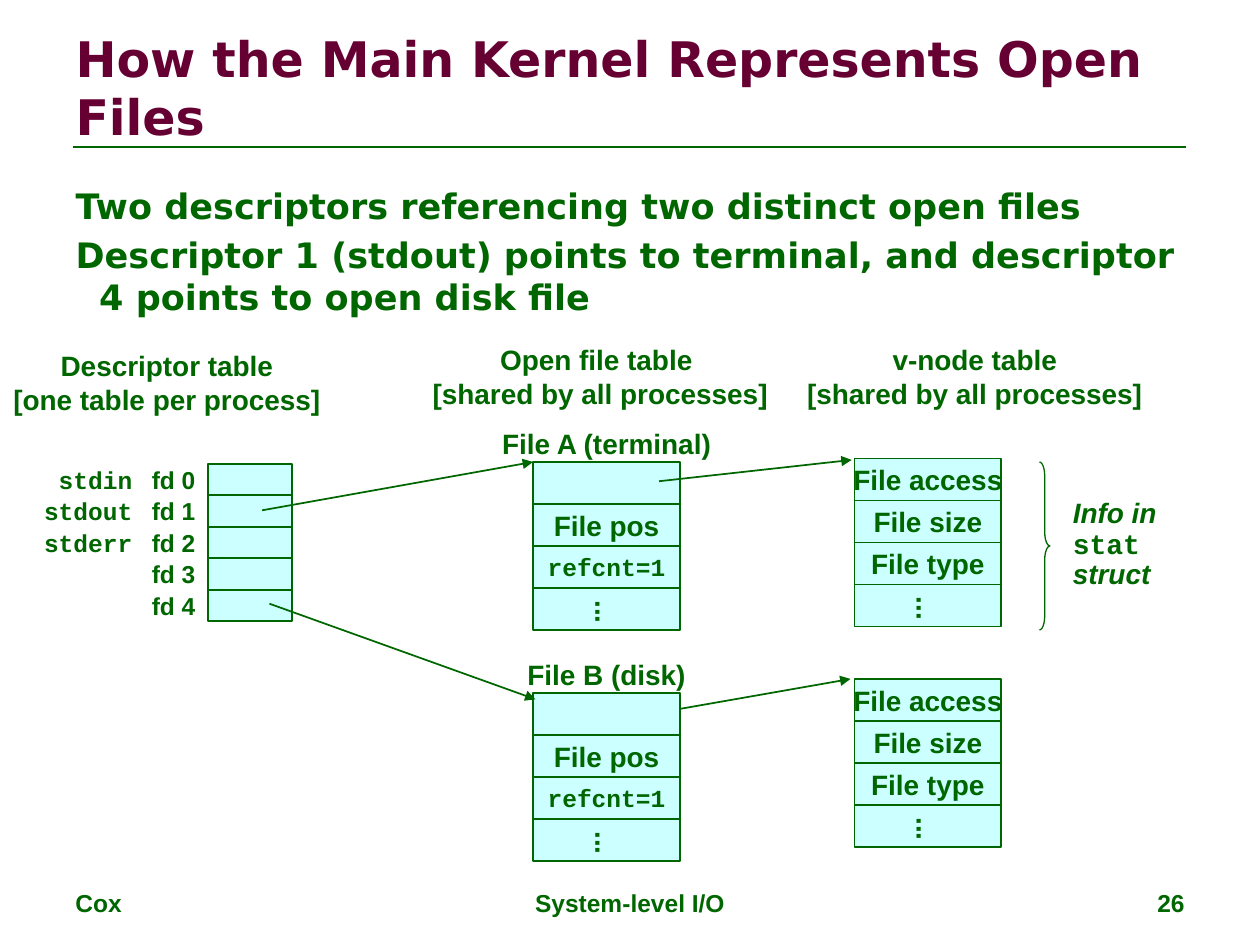
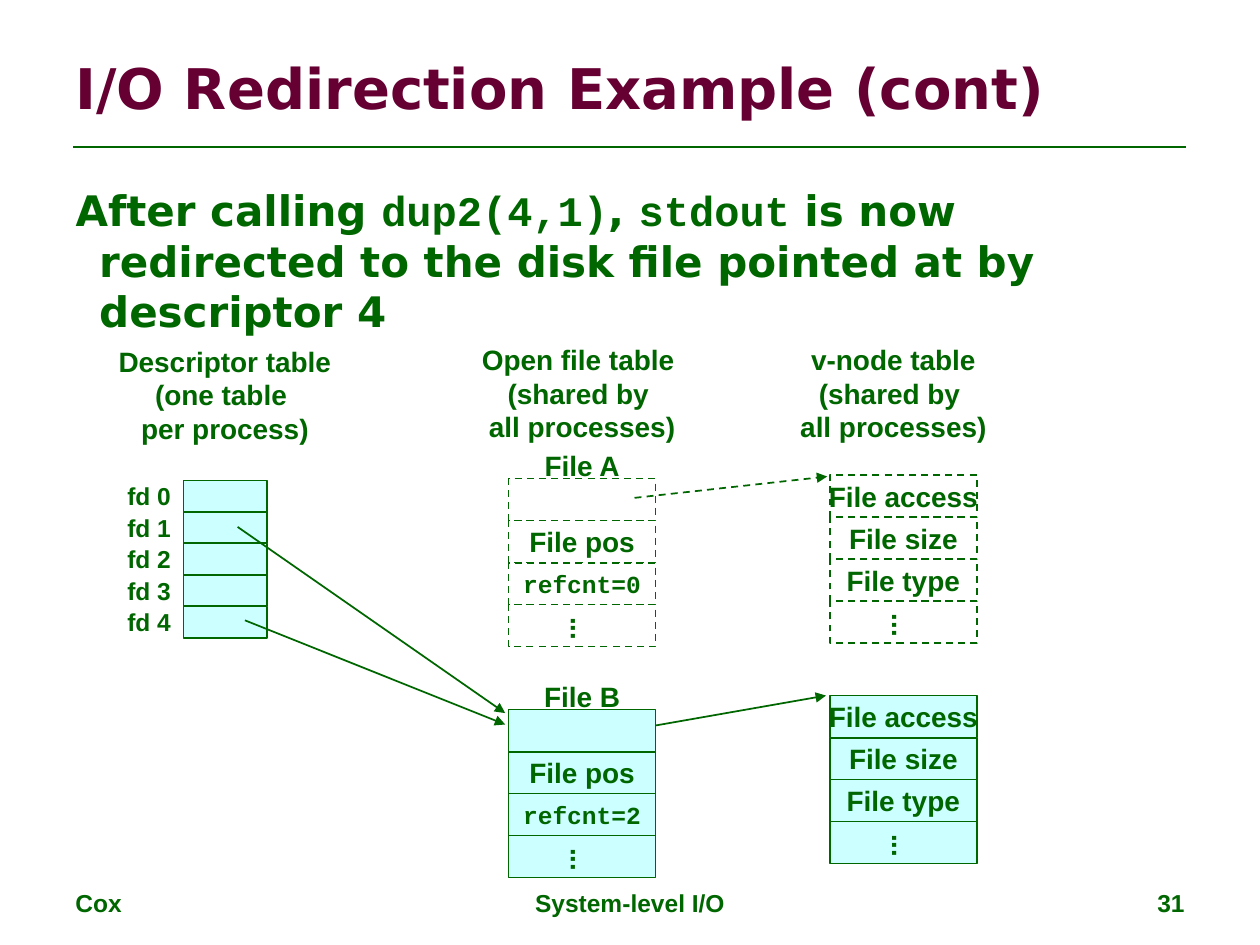
from lxml import etree
from pptx import Presentation
from pptx import util as u
from pptx.dml import color
from pptx.enum import dml, shapes, text
from pptx.oxml import ns

Pt = u.Pt
HUE = {"ink": "006600", "title": "660033", "cell": "CCFFFF", "back": "FFFFFF"}
SANS, HEAD, MONO = "Arial", "DejaVu Sans", "Courier New"
ALIGN = {"l": text.PP_ALIGN.LEFT, "c": text.PP_ALIGN.CENTER,
         "r": text.PP_ALIGN.RIGHT}
ANCHOR = {"t": text.MSO_ANCHOR.TOP, "m": text.MSO_ANCHOR.MIDDLE}

# Sizes and places of the diagram in points, before its shift on a slide
FD_W, FD_H = 48, 18
CELL_W, CELL_H = 84, 24
FD_X, FD_Y = 118.8, 265
OPEN_X, NODE_X = 304.6, 488.2
OPEN_Y = (264, 396)
NODE_Y = (262, 388)
NODE = ["File access", "File size", "File type", "..."]


def rgb(name):
    return color.RGBColor.from_string(HUE[name])


def write(frame, paras, size=16, font=SANS, hue="ink", align="l", anchor="m",
          wrap=False, italic=False, space=None, hang=0):
    """Fill a frame; a paragraph is a string or a list of (text, font, italic)."""
    frame.word_wrap = wrap
    frame.auto_size = text.MSO_AUTO_SIZE.NONE
    frame.vertical_anchor = ANCHOR[anchor]
    for i, runs in enumerate(paras):
        para = frame.add_paragraph() if i else frame.paragraphs[0]
        para.alignment = ALIGN[align]
        if space:
            para.line_spacing = space
        if hang:
            prop = para._p.get_or_add_pPr()
            prop.set("marL", str(Pt(hang)))
            prop.set("indent", str(-Pt(hang)))
            etree.SubElement(prop, ns.qn("a:buNone"))
        if isinstance(runs, str):
            runs = [(runs, font, italic)]
        for words, face, slant in runs:
            run = para.add_run()
            run.text = words
            run.font.size = Pt(size)
            run.font.name = face
            run.font.bold = True
            run.font.italic = slant
            run.font.color.rgb = rgb(hue)


class Deck:
    def __init__(self):
        self.prs = Presentation()
        self.prs.slide_width, self.prs.slide_height = Pt(720), Pt(540)
        self.slide = None

    def start(self, title, size, body, body_size, body_h, page):
        """Add a slide with its title, rule, list and footer."""
        self.slide = self.prs.slides.add_slide(self.prs.slide_layouts[1])
        fill = self.slide.background.fill
        fill.solid()
        fill.fore_color.rgb = rgb("back")
        self.line((42, 84), (678, 84), width=1.5, head=False)
        for x, w, words, align in ((36, 168, "Cox", "l"),
                                   (246, 228, "System-level I/O", "c"),
                                   (516, 168, page, "r")):
            self.label(x, 504, w, 25, [words], size=14, align=align,
                       anchor="t", wrap=True)
        self.holder(0, 21.6, 56.2, [title], size=size, hue="title")
        self.holder(1, 102, body_h, body, size=body_size, anchor="t", hang=13.5)

    def holder(self, idx, y, h, paras, **form):
        box = self.slide.placeholders[idx]
        box.left, box.top, box.width, box.height = Pt(36), Pt(y), Pt(648), Pt(h)
        write(box.text_frame, paras, font=HEAD, wrap=True, **form)

    def label(self, x, y, w, h, paras, **form):
        box = self.slide.shapes.add_textbox(Pt(x), Pt(y), Pt(w), Pt(h))
        write(box.text_frame, paras, **form)

    def stroke(self, line, width=1, dash=False):
        line.color.rgb = rgb("ink")
        line.width = Pt(width)
        if dash:
            line.dash_style = dml.MSO_LINE.DASH

    def shape(self, kind, x, y, w, h, fill=True, **pen):
        item = self.slide.shapes.add_shape(kind, Pt(x), Pt(y), Pt(w), Pt(h))
        item.shadow.inherit = False
        if fill:
            item.fill.solid()
            item.fill.fore_color.rgb = rgb("cell")
        else:
            item.fill.background()
        self.stroke(item.line, **pen)
        return item

    def line(self, start, end, head=True, **pen):
        item = self.slide.shapes.add_connector(
            shapes.MSO_CONNECTOR.STRAIGHT, *map(Pt, start + end))
        self.stroke(item.line, **pen)
        prop = item.element.spPr
        if head:
            etree.SubElement(prop.find(ns.qn("a:ln")), ns.qn("a:tailEnd"),
                             type="triangle")
        etree.SubElement(prop, ns.qn("a:effectLst"))

    def stack(self, x, y, rows, w=CELL_W, h=CELL_H, ghost=False):
        """Draw a column of cells; a ghost is dashed and has no fill."""
        for i, words in enumerate(rows):
            cell = self.shape(shapes.MSO_SHAPE.RECTANGLE, x, y + i * h, w, h,
                              fill=not ghost, dash=ghost)
            if words:
                mono = words.startswith("refcnt")
                write(cell.text_frame, [words], align="c",
                      size=14 if mono else 16, font=MONO if mono else SANS)
            if words == "...":
                cell.element.txBody.bodyPr.set("vert", "eaVert")

    def heads(self, h, *items):
        for mid, y, paras in items:
            self.label(mid - 103, y, 206, h, paras, align="c")

    def tables(self, dx, dy, names, counts, gap, ends, ghost=False):
        """Draw the three tables and their arrows, shifted by dx and dy."""
        def at(x, y):
            return x + dx, y + dy

        self.line(at(370.8, 408.2), at(486, 388))

        # Descriptor table
        x, y = at(FD_X, FD_Y)
        self.stack(x, y, [""] * 5, FD_W, FD_H)
        for i in range(5):
            self.label(x - FD_W, y + i * FD_H, FD_W, FD_H, [f"fd {i}"],
                       size=14, align="r")

        # Open files and their v-nodes
        for i, (name, count) in enumerate(zip(names, counts)):
            pale = ghost and i == 0
            x, y = at(OPEN_X, OPEN_Y[i])
            self.stack(x, y, ["", "File pos", f"refcnt={count}", "..."],
                       ghost=pale)
            self.stack(*at(NODE_X, NODE_Y[i]), NODE, ghost=pale)
            self.label(x, y - gap, CELL_W, 26.6, [name], align="c")

        # Arrows
        self.line(at(149.8, 291.6), ends[0])
        self.line(at(154, 345), ends[1])
        self.line(at(376.6, 275), at(486.7, 262.8), dash=ghost)


def kernel(deck):
    deck.start("How the Main Kernel Represents Open Files", 28,
               ["Two descriptors referencing two distinct open files",
                "Descriptor 1 (stdout) points to terminal, and descriptor 4 "
                "points to open disk file"], 20, 114, "26")
    share = "[shared by all processes]"
    deck.heads(46,
               (95.4, 195.5, ["Descriptor table", "[one table per process]"]),
               (343, 192, ["Open file table ", share]),
               (557, 192, ["v-node table", share]))
    deck.tables(0, 0, ("File A (terminal)", "File B (disk)"), (1, 1), 24,
                ((304.6, 264), (306, 399.6)))

    # Standard stream names
    for i, name in enumerate(("stdin", "stdout", "stderr")):
        deck.label(18, FD_Y + i * FD_H, 64.8, FD_H, [name], size=14,
                   font=MONO, align="r")

    # Note on the v-node fields
    brace = deck.shape(shapes.MSO_SHAPE.RIGHT_BRACE, 594, 264, 6, 96,
                       fill=False, width=0.75)
    brace.adjustments[0] = 1.33
    deck.label(606, 282, 72, 59, ["Info in", [("stat", MONO, False),
                                              (" struct", SANS, True)]],
               italic=True, space=0.9, anchor="t", wrap=True)


def redirect(deck):
    deck.start("I/O Redirection Example (cont)", 32,
               [[("After calling ", HEAD, False), ("dup2(4,1)", MONO, False),
                 (", ", HEAD, False), ("stdout", MONO, False),
                 (" is now redirected to the disk file pointed at by "
                  "descriptor 4", HEAD, False)]], 24, 380, "31")
    share = ["(shared by ", "all processes)"]
    deck.heads(65,
               (128.5, 193, ["Descriptor table", "(one table ",
                             "per process)"]),
               (332.6, 192, ["Open file table "] + share),
               (510.5, 192, ["v-node table"] + share))
    deck.tables(-14, 9.5, ("File A", "File B"), (0, 2), 21,
                ((288.7, 407.5), (288.7, 414)), ghost=True)


def main():
    deck = Deck()
    kernel(deck)
    redirect(deck)
    deck.prs.save("out.pptx")


if __name__ == "__main__":
    main()
